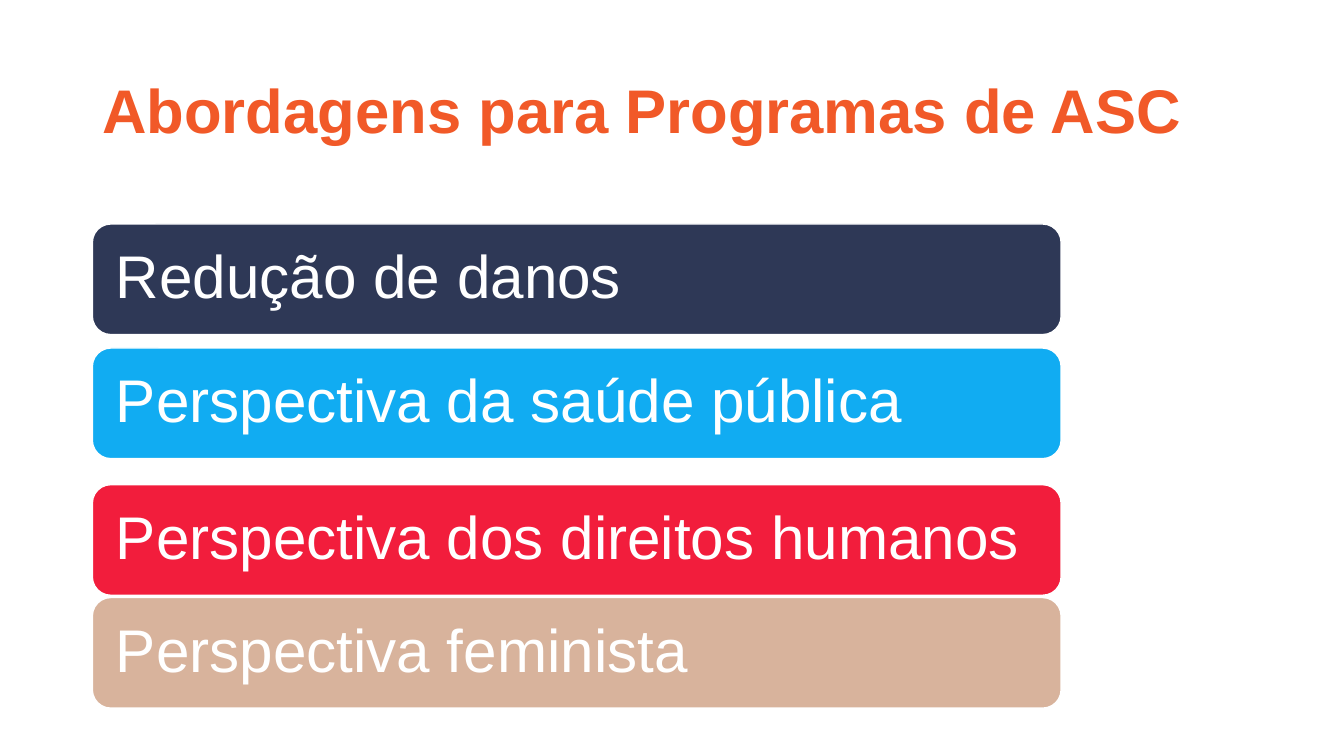
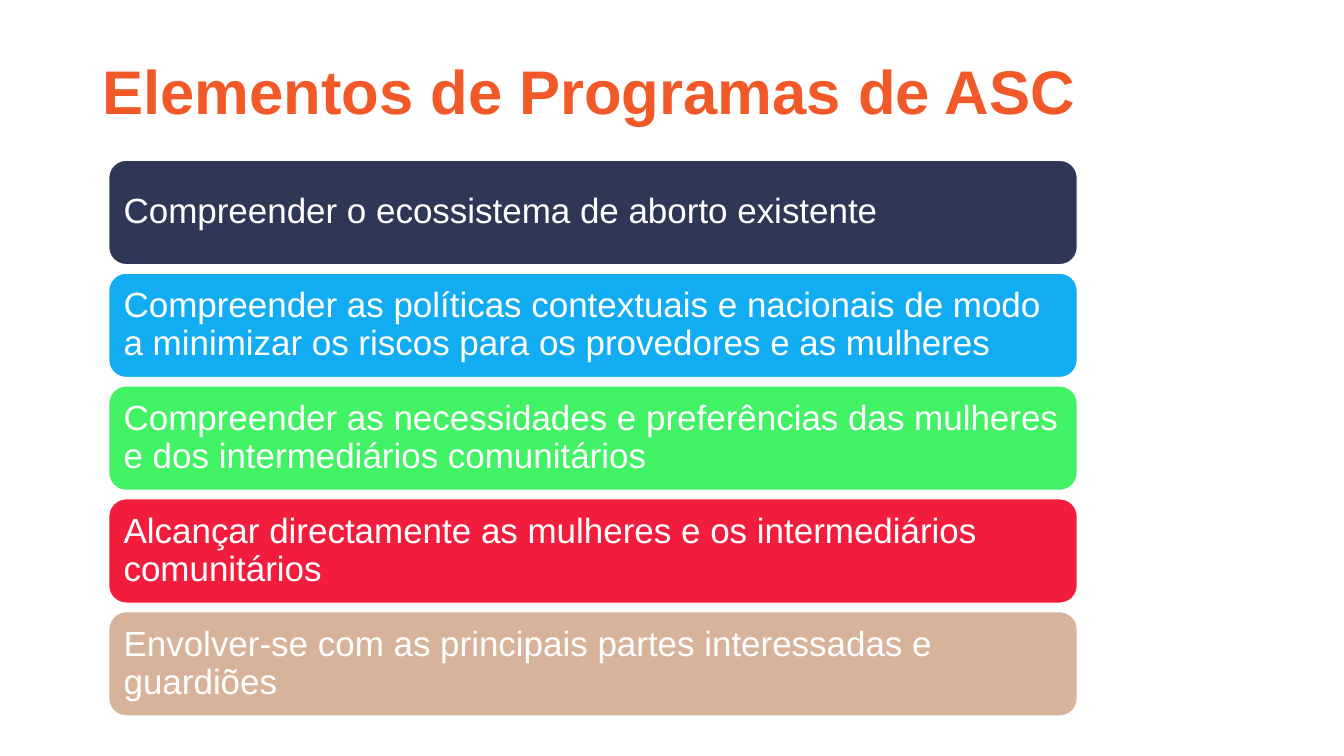
import pptx
import pptx.dml.color
import pptx.enum.shapes
import pptx.enum.text
import pptx.util

Pt = pptx.util.Pt


def color(value):
    return pptx.dml.color.RGBColor.from_string(value)


class Deck:
    font = "Arial"
    orange, white = "F15928", "FFFFFF"
    navy, blue, green, red, sand = "2E3856", "11ACF2", "41F265", "F21D3C", "D8B39C"
    title_size = 44
    bar_width = 692

    def __init__(self):
        self.presentation = pptx.Presentation()
        self.presentation.slide_width = Pt(960)
        self.presentation.slide_height = Pt(540)
        self.slide = None

    def add_slide(self):
        self.slide = self.presentation.slides.add_slide(self.presentation.slide_layouts[6])

    def set_text(self, shape, text, size, text_color, bold=False):
        frame = shape.text_frame
        frame.word_wrap = True
        frame.vertical_anchor = pptx.enum.text.MSO_ANCHOR.MIDDLE
        paragraph = frame.paragraphs[0]
        paragraph.alignment = pptx.enum.text.PP_ALIGN.LEFT
        paragraph.line_spacing = 0.9
        run = paragraph.add_run()
        run.text = text
        run.font.name = self.font
        run.font.size = Pt(size)
        run.font.bold = bold
        run.font.color.rgb = color(text_color)

    def title(self, text, top, width):
        box = self.slide.shapes.add_textbox(Pt(66), Pt(top), Pt(width), Pt(104.4))
        self.set_text(box, text, self.title_size, self.orange, bold=True)

    def bar(self, text, fill, left, top, height, size, inset):
        shape = self.slide.shapes.add_shape(
            pptx.enum.shapes.MSO_SHAPE.ROUNDED_RECTANGLE,
            Pt(left), Pt(top), Pt(self.bar_width), Pt(height))
        shape.shadow.inherit = False
        shape.fill.solid()
        shape.fill.fore_color.rgb = color(fill)
        shape.line.color.rgb = color(self.white)
        shape.line.width = Pt(1)
        frame = shape.text_frame
        frame.margin_left = frame.margin_right = Pt(inset)
        frame.margin_top = frame.margin_bottom = Pt(inset)
        self.set_text(shape, text, size, self.white)


def add_approaches(deck):
    deck.add_slide()
    deck.title("Abordagens para Programas de ASC", 28.8, 857)
    approaches = [
        ("Redução de danos", deck.navy, 160),
        ("Perspectiva da saúde pública", deck.blue, 248.6),
        ("Perspectiva dos direitos humanos", deck.red, 346.2),
        ("Perspectiva feminista", deck.sand, 426.8),
    ]
    for text, fill, top in approaches:
        deck.bar(text, fill, left=66, top=top, height=79, size=43, inset=13)


def add_elements(deck):
    deck.add_slide()
    deck.title("Elementos de Programas de ASC", 15, 744.5)
    elements = [
        ("Compreender o ecossistema de aborto existente", deck.navy),
        ("Compreender as políticas contextuais e nacionais de modo a minimizar "
         "os riscos para os provedores e as mulheres", deck.blue),
        ("Compreender as necessidades e preferências das mulheres e dos "
         "intermediários comunitários", deck.green),
        ("Alcançar directamente as mulheres e os intermediários comunitários", deck.red),
        ("Envolver-se com as principais partes interessadas e guardiões", deck.sand),
    ]
    height, gap = 74.6, 6
    for index, (text, fill) in enumerate(elements):
        top = 114.5 + index * (height + gap)
        deck.bar(text, fill, left=77.6, top=top, height=height, size=25, inset=7.2)


def main():
    deck = Deck()
    add_approaches(deck)
    add_elements(deck)
    deck.presentation.save("out.pptx")


if __name__ == "__main__":
    main()
